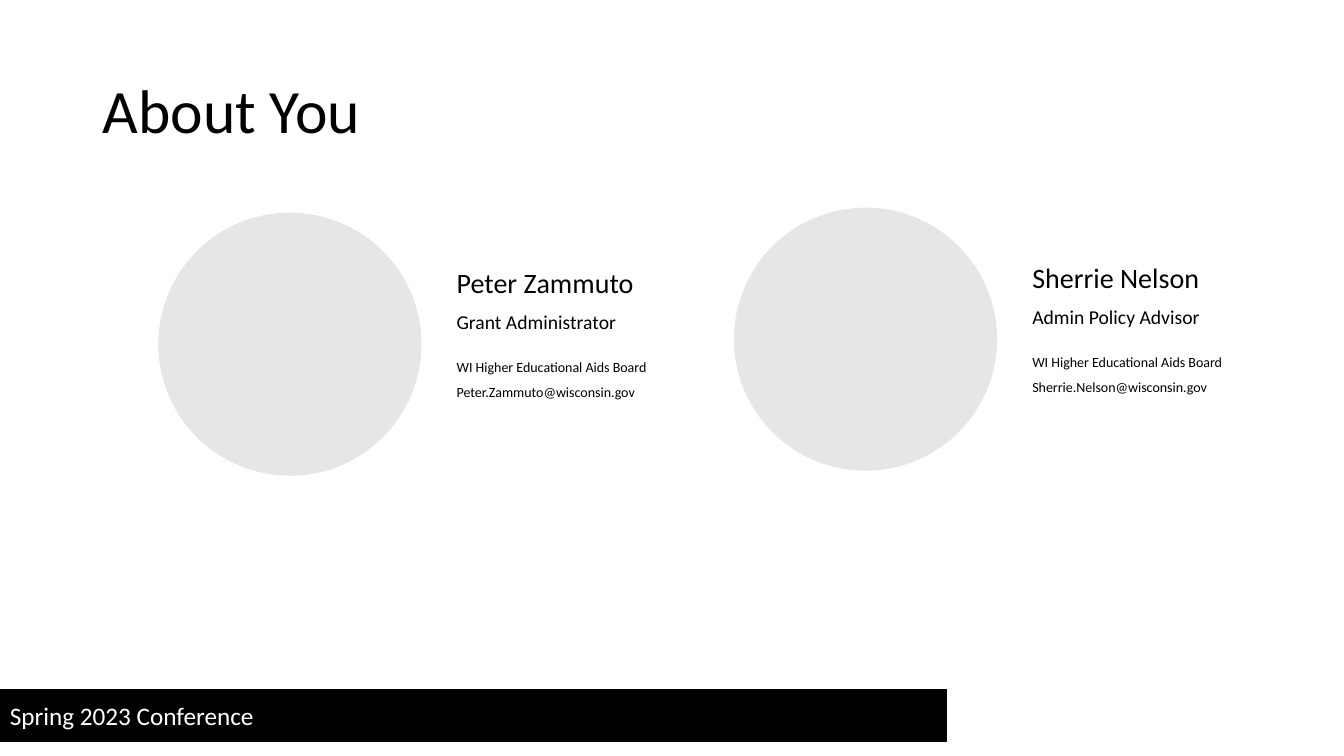
from pptx import Presentation, util as u
from pptx.dml.color import RGBColor
from pptx.enum import shapes, text

BLACK = RGBColor(0x00, 0x00, 0x00)
WHITE = RGBColor(0xFF, 0xFF, 0xFF)
PALE_GREY = RGBColor(0xE7, 0xE6, 0xE6)
FONT = "Calibri"
SLIDE_WIDTH = u.Inches(13.33)
SLIDE_HEIGHT = u.Inches(7.5)

PORTRAIT_SIZE = (19.58, 34.8)
TEXT_OFFSET = 21.46
PEOPLE = [
    (11.78, 28.13, "Peter Zammuto", "Grant Administrator",
     "Peter.Zammuto@wisconsin.gov"),
    (54.61, 27.47, "Sherrie Nelson", "Admin Policy Advisor",
     "Sherrie.Nelson@wisconsin.gov"),
]
EMPLOYER = "WI Higher Educational Aids Board"


def place(left, top, width, height):
    return (int(SLIDE_WIDTH * left / 100), int(SLIDE_HEIGHT * top / 100),
            int(SLIDE_WIDTH * width / 100), int(SLIDE_HEIGHT * height / 100))


def write(shape, lines, size, color=BLACK, spacing=1.0,
          anchor=text.MSO_ANCHOR.TOP):
    frame = shape.text_frame
    frame.word_wrap = True
    frame.vertical_anchor = anchor
    frame.text = "\n".join(lines)
    for paragraph in frame.paragraphs:
        paragraph.alignment = text.PP_ALIGN.LEFT
        paragraph.line_spacing = spacing
        for run in paragraph.runs:
            run.font.name = FONT
            run.font.size = u.Pt(size)
            run.font.color.rgb = color


def add_text(slide, box, lines, size, **style):
    write(slide.shapes.add_textbox(*place(*box)), lines, size, **style)


def add_filled_shape(slide, kind, box, color):
    shape = slide.shapes.add_shape(kind, *place(*box))
    shape.shadow.inherit = False
    shape.fill.solid()
    shape.fill.fore_color.rgb = color
    shape.line.fill.background()
    return shape


def add_footer_bar(slide, caption):
    bar = add_filled_shape(slide, shapes.MSO_SHAPE.RECTANGLE,
                           (0, 91.2, 70.44, 6.8), BLACK)
    bar.line.color.rgb = BLACK
    bar.line.width = u.Pt(1)
    write(bar, [caption], 18, color=WHITE, anchor=text.MSO_ANCHOR.MIDDLE)


def add_person(slide, left, top, name, role, email):
    add_filled_shape(slide, shapes.MSO_SHAPE.OVAL,
                     (left, top, *PORTRAIT_SIZE), PALE_GREY)
    text_left = left + TEXT_OFFSET
    add_text(slide, (text_left, top + 4.13, 19.58, 7.33), [name], 20,
             spacing=1.5)
    add_text(slide, (text_left, top + 12.27, 17.78, 4.53), [role], 14)
    add_text(slide, (text_left, top + 17.47, 17.63, 7.73),
             [EMPLOYER, email], 10, spacing=1.5)


def main():
    presentation = Presentation()
    presentation.slide_width = SLIDE_WIDTH
    presentation.slide_height = SLIDE_HEIGHT
    slide = presentation.slides.add_slide(presentation.slide_layouts[6])
    add_footer_bar(slide, "Spring 2023 Conference")
    add_text(slide, (6.9, 5.33, 86.27, 19.33), ["About You"], 44,
             spacing=0.9, anchor=text.MSO_ANCHOR.MIDDLE)
    for person in PEOPLE:
        add_person(slide, *person)
    presentation.save("out.pptx")


if __name__ == "__main__":
    main()
